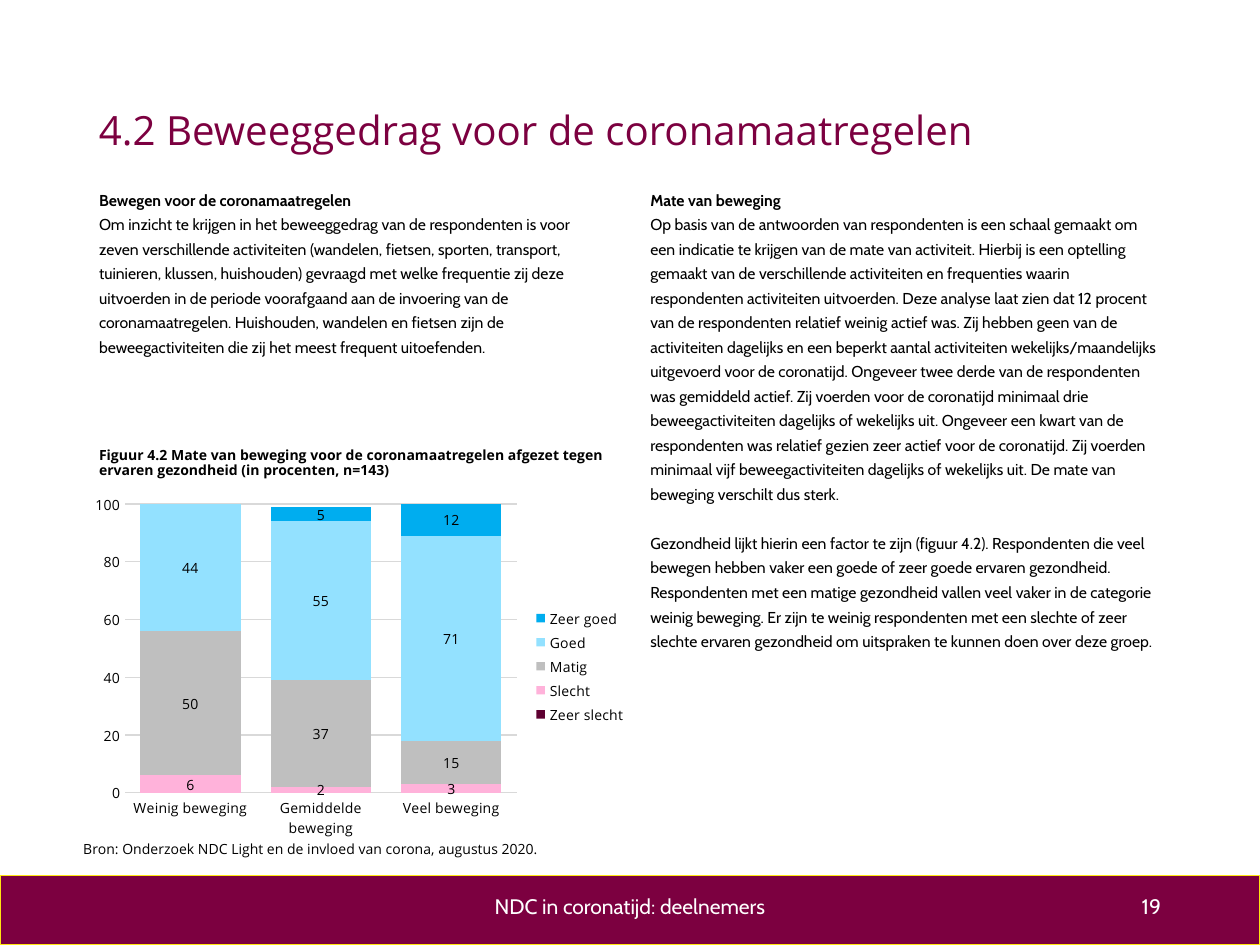
from dataclasses import dataclass

from lxml import etree
from pptx import Presentation, util as u
from pptx.chart.data import CategoryChartData
from pptx.dml.color import RGBColor
from pptx.enum import chart as charts, shapes, text
from pptx.oxml.ns import qn


@dataclass(frozen=True)
class Theme:
    brand: str = "7C0040"
    accent: str = "FFE512"
    ink: str = "000000"
    paper: str = "FFFFFF"
    grid: str = "D9D9D9"
    heading_font: str = "Open Sans"
    body_font: str = "Cabin"
    title_size: float = 23
    footer_size: float = 12
    body_size: float = 9
    small_size: float = 8
    hairline: float = 0.75
    leading: float = 14


THEME = Theme()
COLUMNS, ROWS = 160, 120
MARGIN, GUTTER = 11, 2
COLUMN_WIDTH = (COLUMNS - 2 * MARGIN - GUTTER) / 2
RIGHT_COLUMN = MARGIN + COLUMN_WIDTH + GUTTER

# Each article is a list of paragraphs, each paragraph a list of sentences.
LEFT_TEXT = [[
    "Om inzicht te krijgen in het beweeggedrag van de respondenten is voor zeven verschillende "
    "activiteiten (wandelen, fietsen, sporten, transport, tuinieren, klussen, huishouden) gevraagd "
    "met welke frequentie zij deze uitvoerden in de periode voorafgaand aan de invoering van de "
    "coronamaatregelen.",
    "Huishouden, wandelen en fietsen zijn de beweegactiviteiten die zij het meest frequent "
    "uitoefenden.",
]]
RIGHT_TEXT = [[
    "Op basis van de antwoorden van respondenten is een schaal gemaakt om een indicatie te krijgen "
    "van de mate van activiteit.",
    "Hierbij is een optelling gemaakt van de verschillende activiteiten en frequenties waarin "
    "respondenten activiteiten uitvoerden.",
    "Deze analyse laat zien dat 12 procent van de respondenten relatief weinig actief was.",
    "Zij hebben geen van de activiteiten dagelijks en een beperkt aantal activiteiten "
    "wekelijks/maandelijks uitgevoerd voor de coronatijd.",
    "Ongeveer twee derde van de respondenten was gemiddeld actief.",
    "Zij voerden voor de coronatijd minimaal drie beweegactiviteiten dagelijks of wekelijks uit.",
    "Ongeveer een kwart van de respondenten was relatief gezien zeer actief voor de coronatijd.",
    "Zij voerden minimaal vijf beweegactiviteiten dagelijks of wekelijks uit.",
    "De mate van beweging verschilt dus sterk.",
], [
    "Gezondheid lijkt hierin een factor te zijn (figuur 4.2).",
    "Respondenten die veel bewegen hebben vaker een goede of zeer goede ervaren gezondheid.",
    "Respondenten met een matige gezondheid vallen veel vaker in de categorie weinig beweging.",
    "Er zijn te weinig respondenten met een slechte of zeer slechte ervaren gezondheid om "
    "uitspraken te kunnen doen over deze groep.",
]]
CATEGORIES = ["Weinig beweging", "Gemiddelde beweging", "Veel beweging"]
HEALTH_SERIES = [
    ("Zeer slecht", "5E0031", (None, None, None)),
    ("Slecht", "FFB2DA", (6, 2, 3)),
    ("Matig", "BFBFBF", (50, 37, 15)),
    ("Goed", "93E1FF", (44, 55, 71)),
    ("Zeer goed", "00ADEF", (None, 5, 12)),
]


def set_font(font, name, size, color, bold=False):
    font.name, font.size, font.bold = name, u.Pt(size), bold
    font.color.rgb = RGBColor.from_string(color)


def set_line(line, color):
    line.color.rgb = RGBColor.from_string(color)
    line.width = u.Pt(THEME.hairline)


def place_in_chart(element, before, inner=False, **shares):
    """Fix a chart part at shares of the chart's size."""
    for old in element.findall(qn("c:layout")):
        element.remove(old)
    layout = etree.Element(qn("c:layout"))
    manual = etree.SubElement(layout, qn("c:manualLayout"))
    settings = {"layoutTarget": "inner"} if inner else {}
    settings.update(xMode="edge", yMode="edge", **shares)
    for tag, value in settings.items():
        etree.SubElement(manual, qn("c:" + tag)).set("val", str(value))
    element.find(qn(before)).addprevious(layout)


class SlideBuilder:
    def __init__(self, presentation, theme):
        self.theme = theme
        self.column = presentation.slide_width / COLUMNS
        self.row = presentation.slide_height / ROWS
        self.slide = presentation.slides.add_slide(presentation.slide_layouts[6])

    def box(self, left, top, width, height):
        return (int(left * self.column), int(top * self.row),
                int(width * self.column), int(height * self.row))

    def band(self, *area):
        shape = self.slide.shapes.add_shape(shapes.MSO_SHAPE.RECTANGLE, *self.box(*area))
        shape.shadow.inherit = False
        shape.fill.solid()
        shape.fill.fore_color.rgb = RGBColor.from_string(self.theme.brand)
        set_line(shape.line, self.theme.accent)

    def frame(self, *area, anchor=text.MSO_ANCHOR.TOP):
        frame = self.slide.shapes.add_textbox(*self.box(*area)).text_frame
        frame.word_wrap = True
        frame.vertical_anchor = anchor
        return frame

    def line(self, words, *area, font, size, color, bold=False, align=text.PP_ALIGN.LEFT,
             spacing=0.9, anchor=text.MSO_ANCHOR.MIDDLE):
        paragraph = self.frame(*area, anchor=anchor).paragraphs[0]
        paragraph.text = words
        paragraph.alignment = align
        paragraph.line_spacing = spacing
        set_font(paragraph.font, font, size, color, bold)

    def small_line(self, words, *area, bold=False):
        self.line(words, *area, font=self.theme.heading_font, size=self.theme.small_size,
                  color=self.theme.ink, bold=bold, anchor=text.MSO_ANCHOR.TOP)

    def footer(self, words, *area, align):
        self.line(words, *area, font=self.theme.body_font, size=self.theme.footer_size,
                  color=self.theme.paper, align=align, spacing=1.0)

    def article(self, heading, body, *area):
        frame = self.frame(*area)
        for index, sentences in enumerate([[heading], *body]):
            paragraph = frame.add_paragraph() if index else frame.paragraphs[0]
            paragraph.text = " ".join(sentences)
            paragraph.line_spacing = u.Pt(self.theme.leading)
            if index > 1:
                paragraph.space_before = u.Pt(self.theme.leading)
            set_font(paragraph.font, self.theme.body_font, self.theme.body_size,
                     self.theme.ink, bold=index == 0)

    def stacked_chart(self, categories, series_list, *area):
        data = CategoryChartData(number_format="###0")
        data.categories = categories
        for name, _, values in series_list:
            data.add_series(name, values)
        chart = self.slide.shapes.add_chart(
            charts.XL_CHART_TYPE.COLUMN_STACKED, *self.box(*area), data).chart
        style = (self.theme.heading_font, self.theme.small_size, self.theme.ink)
        set_font(chart.font, *style)
        chart.has_title = False

        plot = chart.plots[0]
        plot.gap_width, plot.overlap, plot.vary_by_categories = 30, 100, False
        for series, (_, color, values) in zip(plot.series, series_list):
            series.format.fill.solid()
            series.format.fill.fore_color.rgb = RGBColor.from_string(color)
            if any(values):
                labels = series.data_labels
                labels.show_value = True
                labels.number_format, labels.number_format_is_linked = "###0", False
                set_font(labels.font, *style)

        category_axis, value_axis = chart.category_axis, chart.value_axis
        for axis in (category_axis, value_axis):
            axis.major_tick_mark = axis.minor_tick_mark = charts.XL_TICK_MARK.NONE
            set_font(axis.tick_labels.font, *style)
        set_line(category_axis.format.line, self.theme.grid)
        set_line(value_axis.major_gridlines.format.line, self.theme.grid)
        value_axis.format.line.fill.background()
        value_axis.minimum_scale, value_axis.maximum_scale = 0, 100
        value_axis.major_unit = 20

        chart.has_legend = True
        legend = chart.legend
        legend.position = charts.XL_LEGEND_POSITION.RIGHT
        legend.include_in_layout = False
        set_font(legend.font, *style)
        plot_area = chart.element.find(".//" + qn("c:plotArea"))
        place_in_chart(plot_area, "c:barChart", inner=True, x=0.07, y=0.05, w=0.71, h=0.81)
        place_in_chart(chart.element.find(".//" + qn("c:legend")), "c:overlay",
                       x=0.8, y=0.33, w=0.19, h=0.35)


def main():
    presentation = Presentation()
    presentation.slide_width, presentation.slide_height = u.Inches(10), u.Inches(7.5)
    builder = SlideBuilder(presentation, THEME)

    builder.band(0, 111.2, COLUMNS, 8.8)
    builder.line("4.2 Beweeggedrag voor de coronamaatregelen",
                 MARGIN, 12.8, COLUMNS - 2 * MARGIN, 8, font=THEME.heading_font,
                 size=THEME.title_size, color=THEME.brand)
    builder.article("Bewegen voor de coronamaatregelen", LEFT_TEXT,
                    MARGIN, 22.72, COLUMN_WIDTH, 32)
    builder.article("Mate van beweging", RIGHT_TEXT, RIGHT_COLUMN, 22.72, COLUMN_WIDTH, 85.44)
    builder.footer("NDC in coronatijd: deelnemers", 53, 112.3, 54, 5.6,
                   align=text.PP_ALIGN.CENTER)
    builder.footer("19", 113, 112.3, 36, 5.6, align=text.PP_ALIGN.RIGHT)
    builder.small_line("Figuur 4.2 Mate van beweging voor de coronamaatregelen afgezet tegen "
                       "ervaren gezondheid (in procenten, n=143)",
                       MARGIN, 56.16, COLUMN_WIDTH, 5.92, bold=True)
    builder.small_line("Bron: Onderzoek NDC Light en de invloed van corona, augustus 2020.",
                       9, 106.24, 67, 3.84)
    builder.stacked_chart(CATEGORIES, HEALTH_SERIES, MARGIN, 61.76, 70, 45.28)
    presentation.save("out.pptx")


if __name__ == "__main__":
    main()
